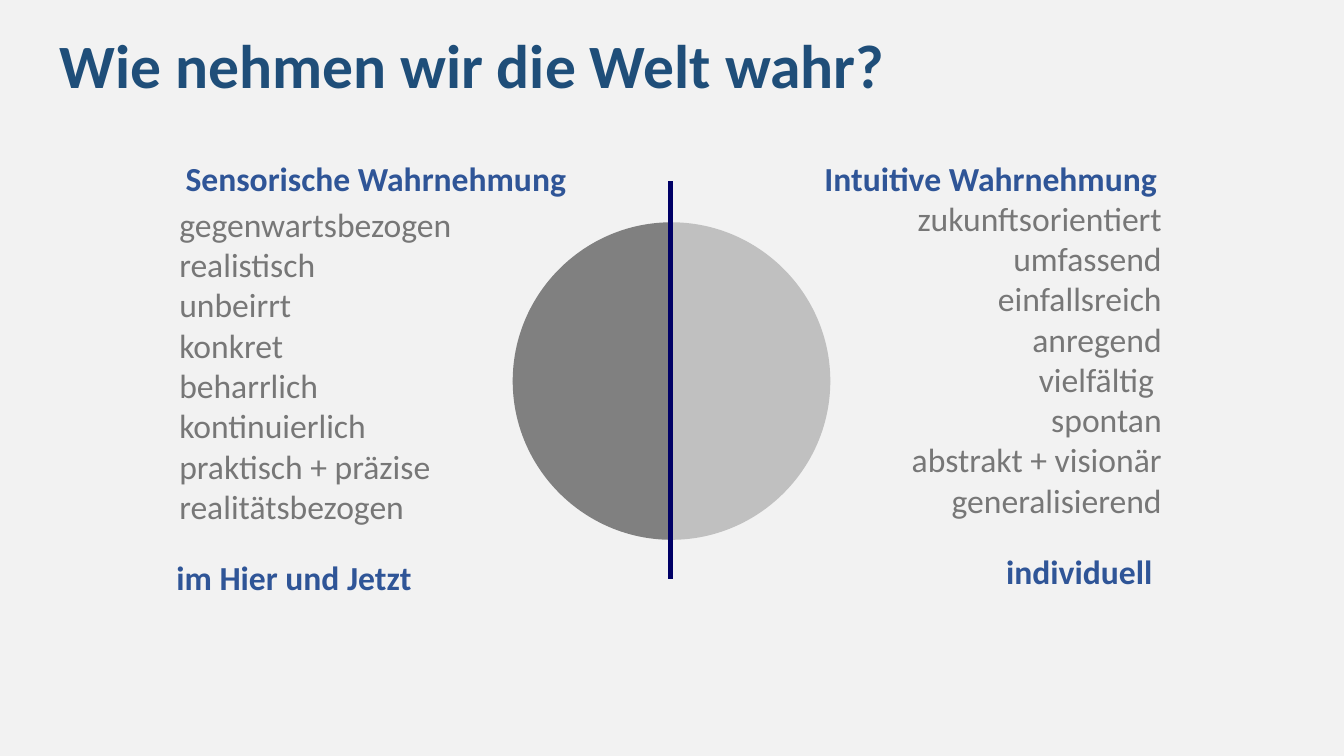
from dataclasses import dataclass

from lxml.etree import SubElement
from pptx import Presentation
from pptx.dml.color import RGBColor
from pptx.enum.shapes import MSO_CONNECTOR
from pptx.enum.text import PP_ALIGN
from pptx.oxml.ns import qn
from pptx.util import Inches, Pt

TITLE = "Wie nehmen wir die Welt wahr?"
SENSORY = {
    "heading": ("Sensorische Wahrnehmung", (1.64, 1.57, 4.41, 0.4)),
    "traits": (["gegenwartsbezogen", "realistisch", "unbeirrt",
                "konkret \vbeharrlich \vkontinuierlich",
                "praktisch + präzise \vrealitätsbezogen"],
               (1.68, 1.97, 3.4, 3.33)),
    "summary": ("im Hier und Jetzt", (1.55, 5.53, 4.5, 0.4)),
    "align": PP_ALIGN.LEFT,
}
INTUITIVE = {
    "heading": ("Intuitive Wahrnehmung ", (7.3, 1.57, 4.45, 0.4)),
    "traits": (["zukunftsorientiert",
                "umfassend\veinfallsreich\vanregend\vvielfältig ",
                "spontan\vabstrakt + visionär", "generalisierend"],
               (8.5, 1.91, 3.12, 3.33)),
    "summary": ("individuell", (7.61, 5.47, 4.02, 0.4)),
    "align": PP_ALIGN.RIGHT,
}
CENTER_X, CENTER_Y, RADIUS = Inches(6.66), Inches(3.78), Inches(1.575)
DIVIDER_X, DIVIDER_TOP, DIVIDER_BOTTOM = 6.65, 1.8, 5.74
ARC_HANDLE = 0.55
COMPASS = [(1, 0), (0, 1), (-1, 0), (0, -1)]


@dataclass(frozen=True)
class Theme:
    font: str = "Calibri"
    background: str = "F2F2F2"
    title: str = "1F4E79"
    accent: str = "2F5597"
    body: str = "777777"
    sensory: str = "808080"
    intuitive: str = "C0C0C0"
    divider: str = "000066"
    title_size: int = 44
    text_size: int = 24
    divider_width: int = 3


THEME = Theme()


def color(value):
    return RGBColor.from_string(value)


def add_text(page, lines, place, size, tone, bold=False, align=PP_ALIGN.LEFT,
             insets=(0.1, 0.05), spacing=None):
    box = page.shapes.add_textbox(*map(Inches, place))
    frame = box.text_frame
    frame.word_wrap = True
    frame.margin_left = frame.margin_right = Inches(insets[0])
    frame.margin_top = frame.margin_bottom = Inches(insets[1])
    frame.text = "\n".join(lines)
    for para in frame.paragraphs:
        para.alignment = align
        para.line_spacing = spacing
        for span in para.runs:
            span.font.name = THEME.font
            span.font.size = Pt(size)
            span.font.bold = bold
            span.font.color.rgb = color(tone)


def add_quarter(page, index, tone):
    start, end = COMPASS[index], COMPASS[(index + 1) % 4]

    def place(along_start, along_end):
        return tuple(int(center + RADIUS * (along_start * first + along_end * last))
                     for center, first, last in zip((CENTER_X, CENTER_Y), start, end))

    builder = page.shapes.build_freeform(*place(1, 0))
    builder.add_line_segments([place(0, 1), place(0, 0)], close=True)
    quarter = builder.convert_to_shape()
    arc = next(quarter.element.iter(qn("a:lnTo")))
    arc.tag = qn("a:cubicBezTo")
    for point in list(arc):
        arc.remove(point)
    for x, y in (place(1, ARC_HANDLE), place(ARC_HANDLE, 1), place(0, 1)):
        SubElement(arc, qn("a:pt"), x=str(x - quarter.left), y=str(y - quarter.top))
    quarter.shadow.inherit = False
    quarter.fill.solid()
    quarter.fill.fore_color.rgb = color(tone)
    quarter.line.fill.background()


def add_divider(page):
    divider = page.shapes.add_connector(
        MSO_CONNECTOR.STRAIGHT, Inches(DIVIDER_X), Inches(DIVIDER_TOP),
        Inches(DIVIDER_X), Inches(DIVIDER_BOTTOM))
    divider.line.color.rgb = color(THEME.divider)
    divider.line.width = Pt(THEME.divider_width)
    SubElement(divider.element.spPr, qn("a:effectLst"))


def add_side(page, side):
    for part in ("summary", "heading"):
        text, place = side[part]
        add_text(page, [text], place, THEME.text_size, THEME.accent, True,
                 side["align"], (0.2, 0))


def main():
    deck = Presentation()
    deck.slide_width, deck.slide_height = Inches(13.33), Inches(7.5)
    page = deck.slides.add_slide(deck.slide_layouts[6])
    page.background.fill.solid()
    page.background.fill.fore_color.rgb = color(THEME.background)
    add_text(page, [TITLE], (0.49, 0.32, 11.5, 1.45), THEME.title_size, THEME.title,
             True, insets=(0.1, 0.03), spacing=0.9)
    for index, tone in ((1, THEME.sensory), (2, THEME.sensory),
                        (3, THEME.intuitive), (0, THEME.intuitive)):
        add_quarter(page, index, tone)
    add_divider(page)
    for side in (SENSORY, INTUITIVE):
        add_side(page, side)
    for side in (SENSORY, INTUITIVE):
        traits, place = side["traits"]
        add_text(page, traits, place, THEME.text_size, THEME.body, align=side["align"])
    deck.save("out.pptx")


if __name__ == "__main__":
    main()
